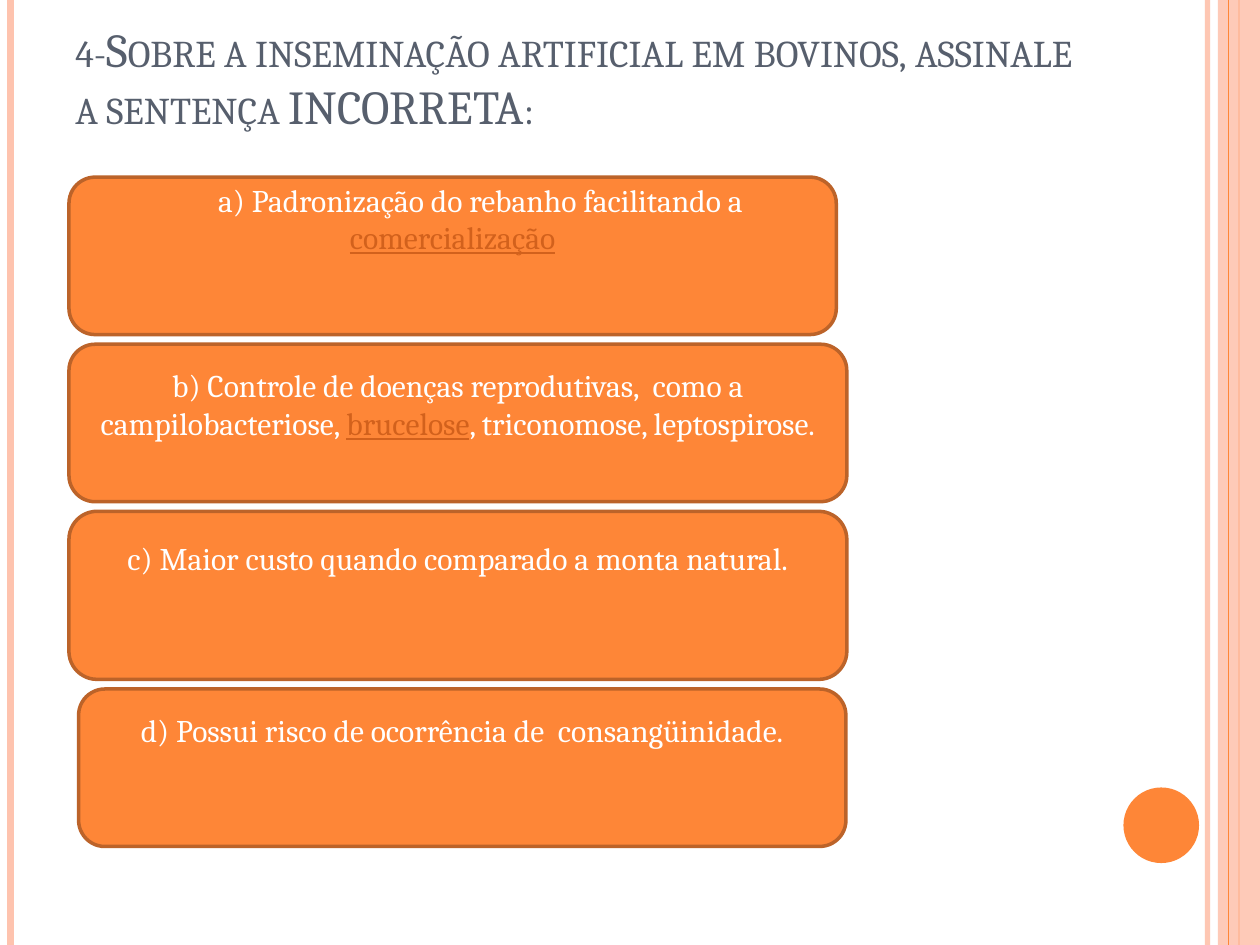
import pptx
import pptx.util
import pptx.dml.color
import pptx.enum.shapes
import pptx.enum.text
import pptx.oxml
import pptx.oxml.ns

Pt = pptx.util.Pt
SHAPE = pptx.enum.shapes.MSO_SHAPE
ANCHOR = pptx.enum.text.MSO_ANCHOR
ALIGN = pptx.enum.text.PP_ALIGN
NS = pptx.oxml.ns.nsdecls("a")

FONT = "Cambria"
ORANGE, PEACH, BROWN = "FE8637", "FEC3AE", "BC6329"
SLATE, WHITE, LINK = "575F6D", "FFFFFF", "D2611C"
ANSWER_LINE = 21.4  # line height of the 18 pt answers


def paint(color_format, value):
    color_format.rgb = pptx.dml.color.RGBColor.from_string(value)


def set_opacity(shape, percent):
    color = shape._element.spPr.find(".//" + pptx.oxml.ns.qn("a:srgbClr"))
    color.append(pptx.oxml.parse_xml(f'<a:alpha {NS} val="{percent * 1000}"/>'))


def add_solid(slide, preset, left, top, width, height, fill):
    solid = slide.shapes.add_shape(preset, Pt(left), Pt(top), Pt(width), Pt(height))
    solid.shadow.inherit = False
    solid.fill.solid()
    paint(solid.fill.fore_color, fill)
    solid.line.fill.background()
    return solid


def add_stripe(slide, x, height, color, weight):
    stripe = slide.shapes.add_connector(
        pptx.enum.shapes.MSO_CONNECTOR.STRAIGHT, Pt(x), Pt(0), Pt(x), Pt(height))
    paint(stripe.line.color, color)
    stripe.line.width = Pt(weight)
    stripe._element.spPr.append(pptx.oxml.parse_xml(f"<a:effectLst {NS}/>"))
    return stripe


def add_frame(slide, width, height):
    # Edge stripes, right-hand band and the corner disc
    set_opacity(add_stripe(slide, width - 30, height, PEACH, 3), 93)
    add_stripe(slide, 6, height, PEACH, 4.5)
    add_stripe(slide, width - 12, height, ORANGE, 1.5)
    set_opacity(add_solid(slide, SHAPE.RECTANGLE, width - 24, 0, 24, height, PEACH), 87)
    add_stripe(slide, width - 18, height, ORANGE, 0.75)
    add_solid(slide, SHAPE.OVAL, width - 78, height - 90, 43.2, 43.2, ORANGE)


def add_question(slide, left, top, width, height, wording):
    question = slide.shapes.add_textbox(Pt(left), Pt(top), Pt(width), Pt(height))
    frame = question.text_frame
    frame.word_wrap = True
    frame.vertical_anchor = ANCHOR.BOTTOM
    frame.margin_bottom = Pt(35.2)
    paragraph = frame.paragraphs[0]
    paragraph.font.name = FONT
    paragraph.font.size = Pt(27)
    paint(paragraph.font.color, SLATE)
    run = paragraph.add_run()
    run.text = wording
    run._r.get_or_add_rPr().set("cap", "small")


def add_answer(slide, left, top, width, height, pieces, lines_below, indent=0):
    """Pieces alternate between plain and linked wording."""
    answer = add_solid(slide, SHAPE.ROUNDED_RECTANGLE, left, top, width, height, ORANGE)
    paint(answer.line.color, BROWN)
    answer.line.width = Pt(2)
    frame = answer.text_frame
    frame.word_wrap = True
    frame.vertical_anchor = ANCHOR.MIDDLE
    frame.margin_top = Pt(2)
    frame.margin_bottom = Pt(2 + lines_below * ANSWER_LINE)
    paragraph = frame.paragraphs[0]
    paragraph.alignment = ALIGN.CENTER
    paragraph.font.name = FONT
    paragraph.font.size = Pt(18)
    if indent:
        paragraph._p.get_or_add_pPr().set("indent", str(Pt(indent)))
    for position, wording in enumerate(pieces):
        linked = position % 2 == 1
        run = paragraph.add_run()
        run.text = wording
        run.font.underline = linked
        paint(run.font.color, LINK if linked else WHITE)


def add_answers(slide, left, top):
    # Each row: left offset, width, height, pieces, free lines below, indent
    rows = [
        (0, 438.5, 90,
         ["a) Padronização do rebanho facilitando a ", "comercialização"], 2, 32),
        (0, 444.5, 90,
         ["b) Controle de doenças reprodutivas,  como a campilobacteriose, ",
          "brucelose", ", triconomose, leptospirose."], 1, 0),
        (0, 444.5, 96, ["c) Maior custo quando comparado a monta natural."], 2, 0),
        (5.5, 438.5, 90, ["d) Possui risco de ocorrência de  consangüinidade."], 2, 0),
    ]
    for offset, width, height, pieces, lines_below, indent in rows:
        add_answer(slide, left + offset, top, width, height, pieces, lines_below, indent)
        top += height + 5.5


def main():
    deck = pptx.Presentation()
    deck.slide_width, deck.slide_height = Pt(720), Pt(540)
    slide = deck.slides.add_slide(deck.slide_layouts[6])
    add_frame(slide, 720, 540)
    add_question(slide, 36, 21.6, 588, 90,
                 "4-Sobre a inseminação artificial em bovinos, assinale a sentença INCORRETA:")
    add_answers(slide, 39.4, 101.2)
    deck.save("out.pptx")


if __name__ == "__main__":
    main()
